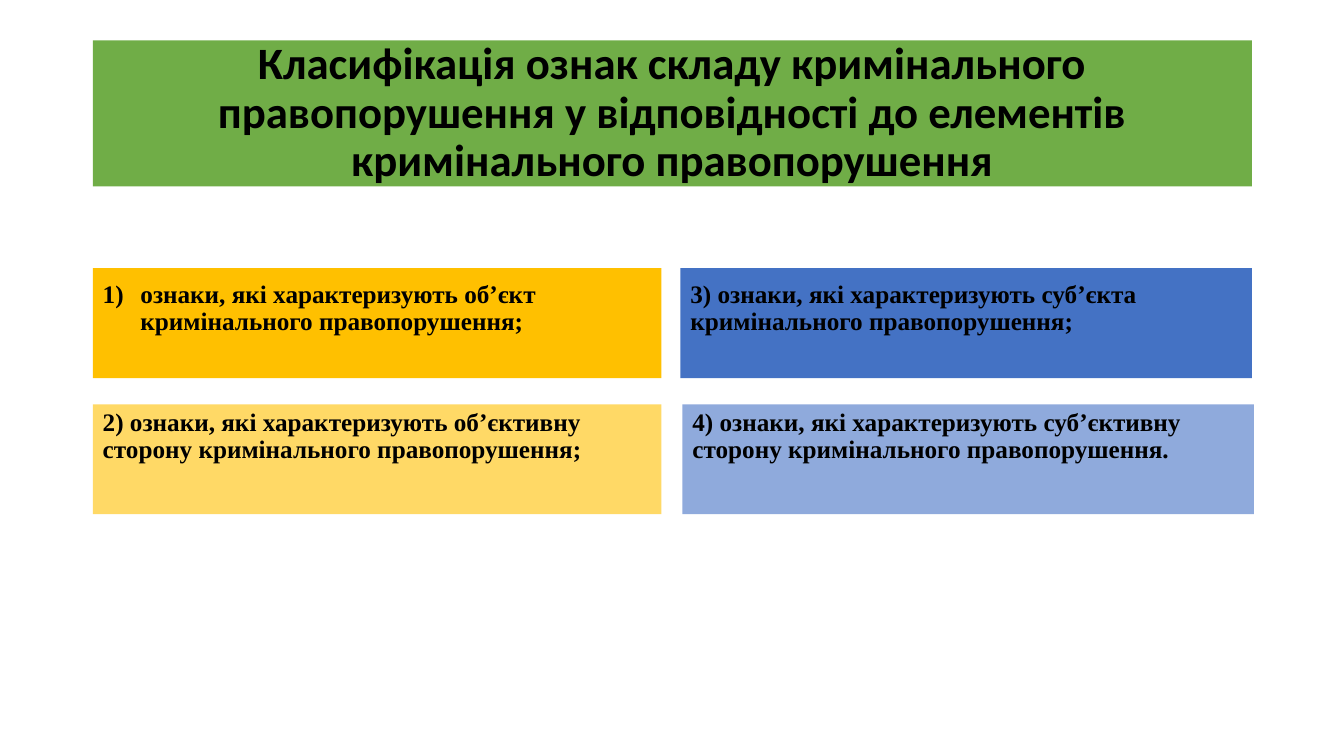
from lxml import etree
from pptx import Presentation
from pptx.dml.color import RGBColor
from pptx.enum.shapes import MSO_SHAPE
from pptx.enum.text import MSO_ANCHOR as ANCHOR, PP_ALIGN as ALIGN
from pptx.oxml.ns import qn
from pptx.util import Cm, Pt

BLACK = RGBColor(0x00, 0x00, 0x00)
GREEN = RGBColor(0x70, 0xAD, 0x47)
AMBER = RGBColor(0xFF, 0xC0, 0x00)
LIGHT_AMBER = RGBColor(0xFF, 0xD9, 0x66)
BLUE = RGBColor(0x44, 0x72, 0xC4)
LIGHT_BLUE = RGBColor(0x8F, 0xAA, 0xDC)

TITLE = ("Класифікація ознак складу кримінального правопорушення "
         "у відповідності до елементів кримінального правопорушення")
OBJECT = "ознаки, які характеризують об’єкт кримінального правопорушення;"
OBJECTIVE_SIDE = "2) ознаки, які характеризують об’єктивну сторону кримінального правопорушення;"
SUBJECT = "3) ознаки, які характеризують суб’єкта кримінального правопорушення;"
SUBJECTIVE_SIDE = "4) ознаки, які характеризують суб’єктивну сторону кримінального правопорушення."


def add_panel(s, box, fill, text, font, size, align=ALIGN.LEFT, anchor=ANCHOR.TOP, inset=0.13):
    """Draw a filled rectangle with bold text and return its paragraph."""
    sp = s.shapes.add_shape(MSO_SHAPE.RECTANGLE, *(Cm(v) for v in box))
    sp.shadow.inherit = False
    sp.fill.solid()
    sp.fill.fore_color.rgb = fill
    sp.line.fill.background()
    tf = sp.text_frame
    tf.word_wrap = True
    tf.vertical_anchor = anchor
    tf.margin_top = Cm(inset)
    p = tf.paragraphs[0]
    p.alignment = align
    p.line_spacing = 0.9
    r = p.add_run()
    r.text = text
    r.font.name, r.font.size, r.font.bold = font, Pt(size), True
    r.font.color.rgb = BLACK
    return p


def number_paragraph(p, indent):
    """Give a paragraph automatic numbering with a hanging indent."""
    pPr = p._p.get_or_add_pPr()
    pPr.set("marL", str(Cm(indent)))
    pPr.set("indent", str(-Cm(indent)))
    etree.SubElement(pPr, qn("a:buFont"), typeface="+mj-lt")
    etree.SubElement(pPr, qn("a:buAutoNum"), type="arabicParenR")


def add_title(s, box):
    """Place the heading band."""
    add_panel(s, box, GREEN, TITLE, "Calibri", 32, ALIGN.CENTER, ANCHOR.MIDDLE)


def add_column(s, box, upper, lower, lower_shift=0):
    """Stack two panels in a column and return the upper paragraph."""
    left, top, width, height = box
    panel_height = 2.77
    lower_box = (left + lower_shift, top + height - panel_height, width, panel_height)
    p = add_panel(s, (left, top, width, panel_height), *upper, "Times New Roman", 18, inset=0.33)
    add_panel(s, lower_box, *lower, "Times New Roman", 18)
    return p


def main():
    """Build the slide and save it."""
    prs = Presentation()
    prs.slide_width, prs.slide_height = Cm(33.87), Cm(19.05)
    s = prs.slides.add_slide(prs.slide_layouts[6])
    add_title(s, (2.34, 1.02, 29.21, 3.68))
    p = add_column(s, (2.34, 6.76, 14.33, 6.2), (AMBER, OBJECT), (LIGHT_AMBER, OBJECTIVE_SIDE))
    number_paragraph(p, 0.95)
    add_column(s, (17.15, 6.76, 14.4, 6.2), (BLUE, SUBJECT), (LIGHT_BLUE, SUBJECTIVE_SIDE), 0.05)
    prs.save("out.pptx")


if __name__ == "__main__":
    main()
